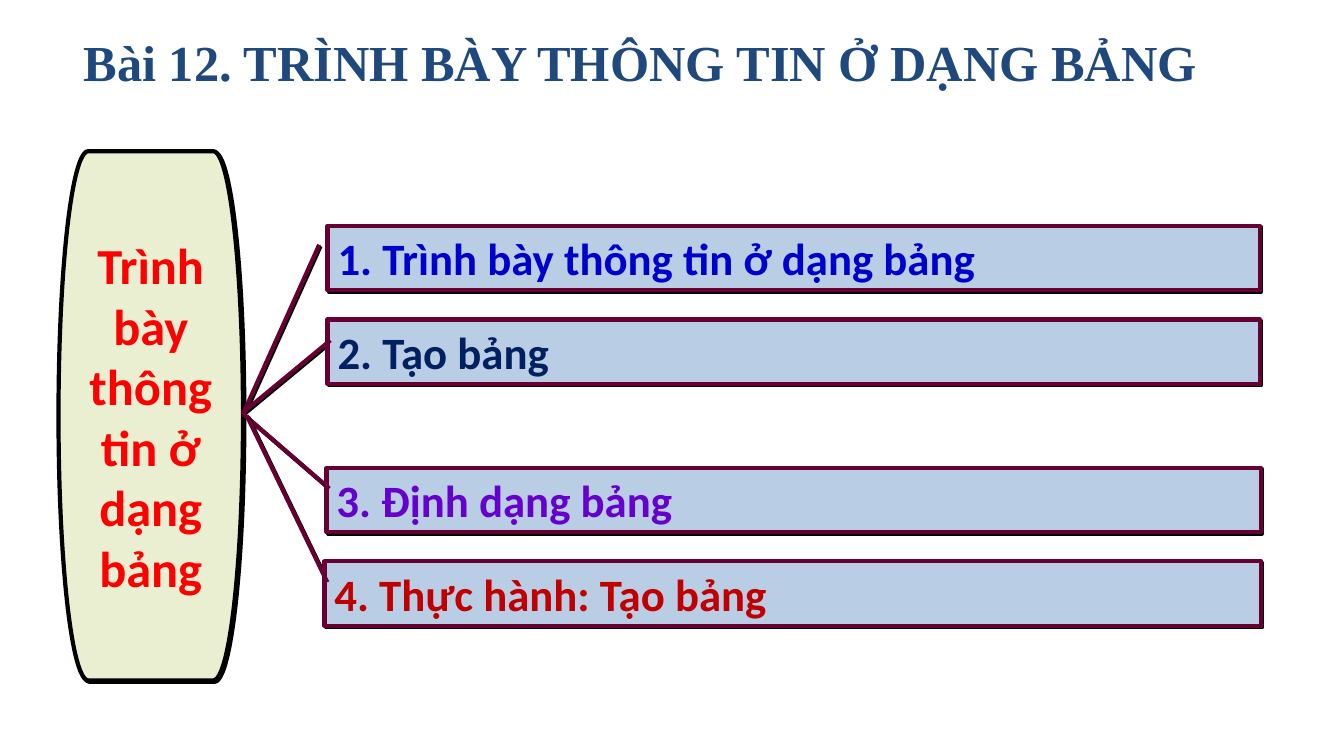
from dataclasses import dataclass

from lxml.etree import SubElement
from pptx import Presentation
from pptx.dml.color import RGBColor
from pptx.enum.shapes import MSO_SHAPE
from pptx.enum.text import MSO_ANCHOR, MSO_AUTO_SIZE, PP_ALIGN
from pptx.oxml.ns import qn
from pptx.shapes.autoshape import Shape
from pptx.slide import Slide
from pptx.util import Pt

COLOURS = {
    "title": "1F497D", "topic": "FF0000", "topic_fill": "EAEFD2",
    "topic_line": "000000", "section_fill": "B9CDE5",
    "section_line": "660033", "shadow": "000000", "blue": "0000CC",
    "navy": "002060", "violet": "6600CC", "red": "C00000",
}
SECTION_HEIGHT = 46.08


@dataclass(frozen=True)
class Section:
    text: str
    colour: str
    left: float
    top: float
    width: float
    pointer: tuple[float, float, float, float]


SECTIONS = [
    Section("1. Trình bày thông tin ở dạng bảng", "blue", 234, 161.3, 666,
            (0.294, -0.009, 2.927, -0.091)),
    Section("2. Tạo bảng", "navy", 234, 228.2, 666,
            (0.324, 0.003, 1.447, -0.091)),
    Section("3. Định dạng bảng", "violet", 233.3, 334.1, 667.4,
            (0.324, 0.003, -0.829, -0.089)),
    Section("4. Thực hành: Tạo bảng", "red", 231.8, 401, 668.9,
            (0.324, 0.003, -2.258, -0.083)),
]


def colour(name: str) -> RGBColor:
    return RGBColor.from_string(COLOURS[name])


def write(shape: Shape, text: str, colour_name: str, size: float,
          alignment: PP_ALIGN, anchor: MSO_ANCHOR,
          font_name: str = "Calibri") -> None:
    frame = shape.text_frame
    frame.word_wrap = True
    frame.auto_size = MSO_AUTO_SIZE.NONE
    frame.vertical_anchor = anchor
    paragraph = frame.paragraphs[0]
    paragraph.alignment = alignment
    run = paragraph.add_run()
    run.text = text
    run.font.name = font_name
    run.font.size = Pt(size)
    run.font.bold = True
    run.font.color.rgb = colour(colour_name)


def add_shadow(shape: Shape) -> None:
    shape.shadow.inherit = False
    effects = shape.element.spPr.find(qn("a:effectLst"))
    shadow = SubElement(effects, qn("a:outerShdw"), blurRad="0",
                        dist=str(Pt(1.4)), dir="2700000", algn="ctr",
                        rotWithShape="0")
    SubElement(shadow, qn("a:srgbClr"), val=COLOURS["shadow"])


def add_box(slide: Slide, kind: MSO_SHAPE, left: float, top: float,
            width: float, height: float, style: str) -> Shape:
    shape = slide.shapes.add_shape(kind, Pt(left), Pt(top), Pt(width), Pt(height))
    shape.fill.solid()
    shape.fill.fore_color.rgb = colour(f"{style}_fill")
    shape.line.color.rgb = colour(f"{style}_line")
    shape.line.width = Pt(3)
    add_shadow(shape)
    return shape


def add_title(slide: Slide) -> None:
    title = slide.shapes.title
    title.left, title.top = Pt(18), Pt(19.4)
    title.width, title.height = Pt(879.1), Pt(46.1)
    write(title, "Bài 12. TRÌNH BÀY THÔNG TIN Ở DẠNG BẢNG", "title", 36,
          PP_ALIGN.CENTER, MSO_ANCHOR.BOTTOM, "Times New Roman")
    frame = title.text_frame
    frame.margin_left = frame.margin_right = frame.margin_bottom = Pt(0)
    frame.margin_top = Pt(3.6)


def add_topic(slide: Slide) -> None:
    topic = add_box(slide, MSO_SHAPE.FLOWCHART_TERMINATOR,
                    41.8, 108, 131.8, 378, "topic")
    write(topic, "Trình bày thông tin ở dạng bảng", "topic", 36,
          PP_ALIGN.CENTER, MSO_ANCHOR.MIDDLE)


def add_section(slide: Slide, section: Section) -> None:
    callout = add_box(slide, MSO_SHAPE.LINE_CALLOUT_1, section.left,
                      section.top, section.width, SECTION_HEIGHT, "section")
    for index, value in enumerate(section.pointer):
        callout.adjustments[index] = value
    write(callout, section.text, section.colour, 32,
          PP_ALIGN.JUSTIFY, MSO_ANCHOR.MIDDLE)


def main() -> None:
    """Build the lesson overview slide and save it."""
    presentation = Presentation()
    presentation.slide_width, presentation.slide_height = Pt(960), Pt(540)
    slide = presentation.slides.add_slide(presentation.slide_layouts[5])
    add_title(slide)
    add_topic(slide)
    for section in SECTIONS:
        add_section(slide, section)
    presentation.save("out.pptx")


if __name__ == "__main__":
    main()
